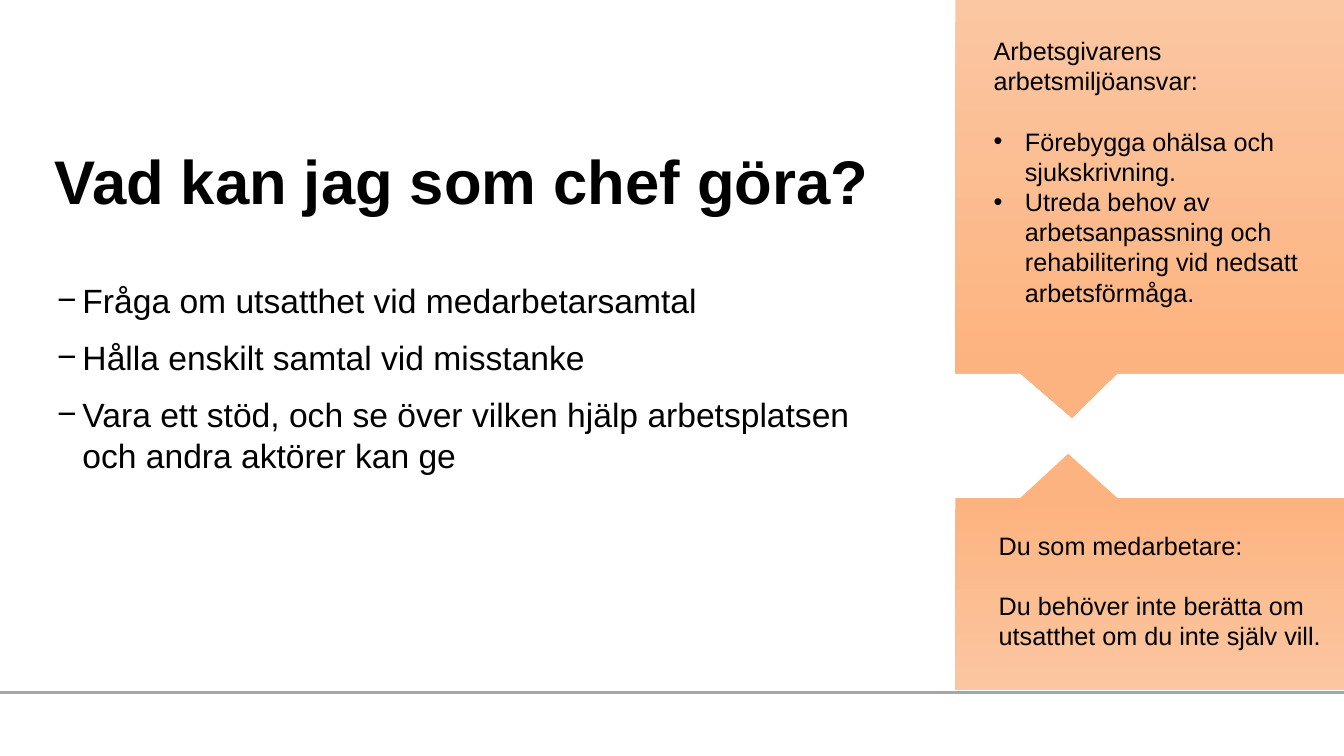
from lxml import etree
from pptx import Presentation
from pptx.dml.color import RGBColor
from pptx.enum.shapes import MSO_CONNECTOR, MSO_SHAPE
from pptx.oxml.ns import qn
from pptx.util import Cm, Pt

CALLOUT = MSO_SHAPE.RECTANGULAR_CALLOUT
STRAIGHT = MSO_CONNECTOR.STRAIGHT
FONT = "Arial"
COLORS = {"text": "000000", "rule": "A6A6A6", "light": "FBC6A2", "dark": "FDB37F"}
SLIDE_WIDTH, SLIDE_HEIGHT = 33.87, 19.05
PANEL_LEFT = 24.08
SIDE_SIZE = 18
BLANK_LINE = 21.6


def color(name):
    return RGBColor.from_string(COLORS[name])


def add_text_box(slide, left, top, width, height):
    shape = slide.shapes.add_textbox(Cm(left), Cm(top), Cm(width), Cm(height))
    shape.text_frame.word_wrap = True
    return shape.text_frame


def add_paragraph(frame, text, size, bold=False, before=0, after=0, spacing=None):
    first = frame.paragraphs[0]
    paragraph = frame.add_paragraph() if first.runs else first
    paragraph.space_before = Pt(before)
    paragraph.space_after = Pt(after)
    if spacing:
        paragraph.line_spacing = spacing
    for index, line in enumerate(text.split("\n")):
        if index:
            paragraph.add_line_break()
        run = paragraph.add_run()
        run.text = line
        run.font.name = FONT
        run.font.size = Pt(size)
        run.font.bold = bold
        run.font.color.rgb = color("text")
    return paragraph


def add_bullet(paragraph, character, margin, hanging):
    properties = paragraph._p.get_or_add_pPr()
    properties.set("marL", str(Cm(margin)))
    properties.set("indent", str(-Cm(hanging)))
    etree.SubElement(properties, qn("a:buFont")).set("typeface", FONT)
    etree.SubElement(properties, qn("a:buChar")).set("char", character)


def add_callout(slide, top, height, tip, gradient):
    shape = slide.shapes.add_shape(
        CALLOUT, Cm(PANEL_LEFT), Cm(top), Cm(SLIDE_WIDTH - PANEL_LEFT), Cm(height)
    )
    shape.shadow.inherit = False
    shape.adjustments[0], shape.adjustments[1] = tip
    shape.line.fill.background()
    shape.fill.gradient()
    shape.fill.gradient_angle = 270
    for stop, name in zip(shape.fill.gradient_stops, gradient):
        stop.color.rgb = color(name)


def add_rule(slide, top):
    rule = slide.shapes.add_connector(STRAIGHT, 0, Cm(top), Cm(SLIDE_WIDTH), Cm(top))
    rule.line.color.rgb = color("rule")
    rule.line.width = Pt(1.5)
    etree.SubElement(rule._element.spPr, qn("a:effectLst"))


def add_main_text(slide):
    title = add_text_box(slide, 1.12, 3.84, 22.8, 3.1)
    add_paragraph(title, "Vad kan jag som chef göra?", 44, bold=True, spacing=0.8)
    body = add_text_box(slide, 1.12, 6.93, 21.16, 10.39)
    for advice in (
        "Fråga om utsatthet vid medarbetarsamtal",
        "Hålla enskilt samtal vid misstanke",
        "Vara ett stöd, och se över vilken hjälp arbetsplatsen och andra aktörer kan ge",
    ):
        add_bullet(add_paragraph(body, advice, 24, after=12), "−", 0.71, 0.64)


def add_employer_panel(slide):
    add_callout(slide, 0, 9.4, (-0.2, 0.62), ("light", "dark"))
    frame = add_text_box(slide, 24.79, 0.76, 9.07, 7.19)
    add_paragraph(frame, "Arbetsgivarens\narbetsmiljöansvar:", SIDE_SIZE)
    duties = (
        "Förebygga ohälsa och sjukskrivning.",
        "Utreda behov av arbetsanpassning och rehabilitering vid nedsatt arbetsförmåga.",
    )
    for duty, before in zip(duties, (BLANK_LINE, 0)):
        add_bullet(add_paragraph(frame, duty, SIDE_SIZE, before=before), "•", 0.79, 0.79)


def add_employee_panel(slide):
    add_callout(slide, 12.55, 4.85, (-0.21, -0.73), ("dark", "light"))
    frame = add_text_box(slide, 24.92, 13.23, 8.95, 3.33)
    add_paragraph(frame, "Du som medarbetare:", SIDE_SIZE)
    add_paragraph(
        frame,
        "Du behöver inte berätta om utsatthet om du inte själv vill.",
        SIDE_SIZE,
        before=BLANK_LINE,
    )


def main():
    presentation = Presentation()
    presentation.slide_width = Cm(SLIDE_WIDTH)
    presentation.slide_height = Cm(SLIDE_HEIGHT)
    slide = presentation.slides.add_slide(presentation.slide_layouts[6])
    add_rule(slide, 17.45)
    add_main_text(slide)
    add_employer_panel(slide)
    add_employee_panel(slide)
    presentation.save("out.pptx")


if __name__ == "__main__":
    main()
